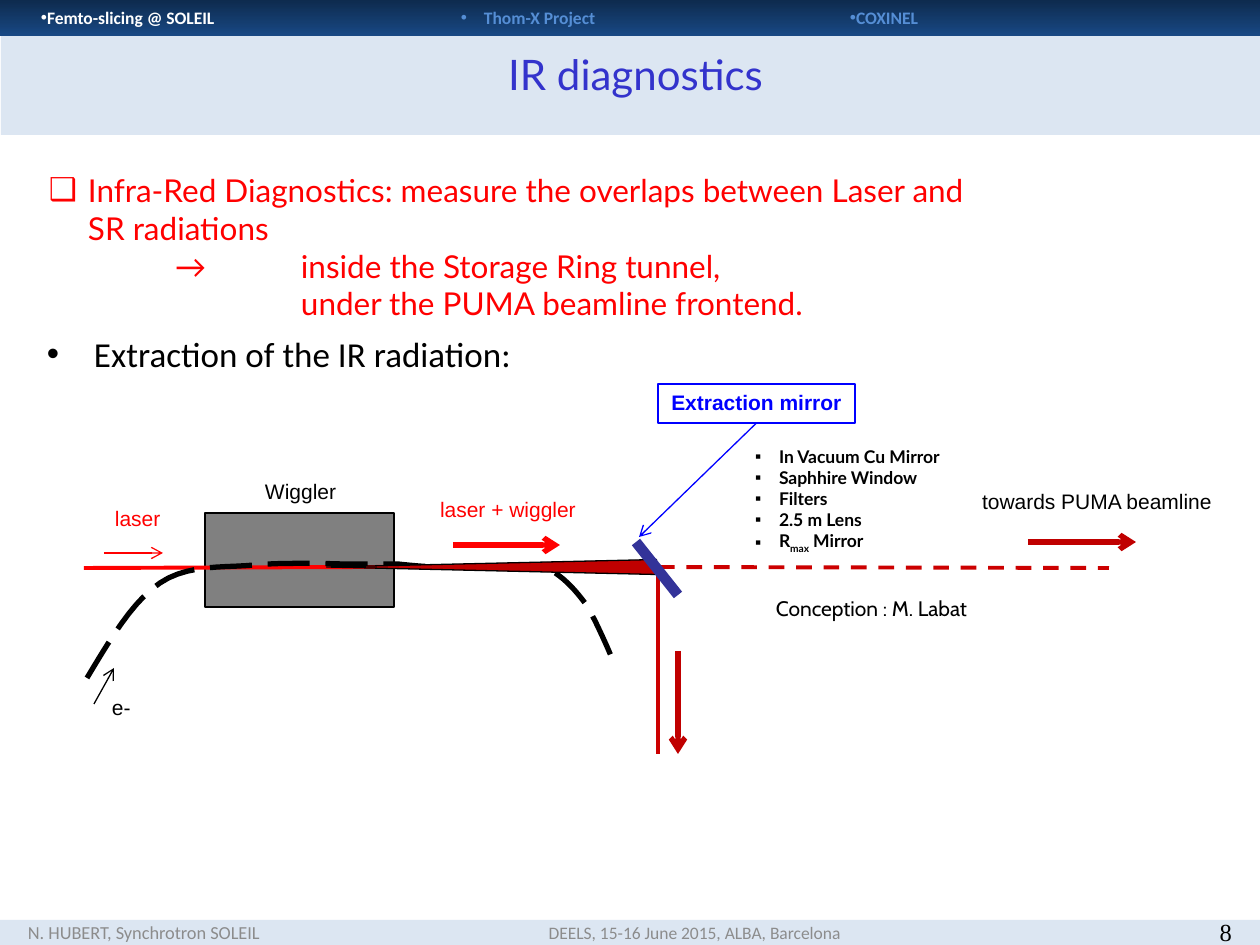
from dataclasses import dataclass

from lxml.etree import SubElement
from pptx import Presentation
from pptx.dml.color import RGBColor
from pptx.enum.dml import MSO_LINE as DASH
from pptx.enum.shapes import MSO_CONNECTOR as CONN, MSO_SHAPE as SHAPE
from pptx.enum.text import MSO_ANCHOR as ANCHOR, PP_ALIGN as ALIGN
from pptx.oxml.ns import qn
from pptx.util import Emu, Pt

PX = 914400 / 126
BLACK, RED, DARK_RED, BLUE = "000000", "FF0000", "C00000", "0000FF"
PALE, SKY, GREY = "DCE6F2", "558ED5", "8C8C8C"
WIDE = (13, 6, 13, 6)
TIGHT = (0, 0, 0, 0)


@dataclass
class Label:
    text: str
    box: tuple
    color: str = BLACK
    size: float = 12
    font: str = "Arial"
    align: ALIGN = ALIGN.LEFT
    anchor: ANCHOR = ANCHOR.TOP
    wrap: bool = False
    bold: bool = False
    bullet: str = ""
    hang: int = 0
    inset: tuple = WIDE


@dataclass
class Line:
    start: tuple
    end: tuple
    color: str
    width: float
    arrow: bool = False
    dash: DASH = None


def px(n: float) -> Emu:
    return Emu(round(n * PX))


def rgb(color: str) -> RGBColor:
    return RGBColor.from_string(color)


def write(tf, text: str, *, size=12, font="Arial", color=BLACK, bold=False,
          align=ALIGN.LEFT, bullet="", hang=0, tabs=()):
    for line in text.split("\n"):
        p = tf.add_paragraph() if tf.paragraphs[0].runs else tf.paragraphs[0]
        p.alignment = align
        pPr = p._p.get_or_add_pPr()
        if bullet:
            pPr.set("marL", str(px(hang)))
            pPr.set("indent", str(-px(hang)))
            SubElement(pPr, qn("a:buFont"), typeface="Arial")
            SubElement(pPr, qn("a:buChar"), char=bullet)
        if tabs:
            stops = SubElement(pPr, qn("a:tabLst"))
            for tab in tabs:
                SubElement(stops, qn("a:tab"), pos=str(px(tab)), algn="l")
        for i, part in enumerate(line.split("|")):
            r = p.add_run()
            r.text = part
            r.font.size, r.font.name, r.font.bold = Pt(size), font, bold
            r.font.color.rgb = rgb(color)
            if i % 2:
                r._r.get_or_add_rPr().set("baseline", "-25000")


def set_frame(tf, inset=WIDE, wrap=False, anchor=ANCHOR.TOP):
    tf.margin_left, tf.margin_top, tf.margin_right, tf.margin_bottom = map(px, inset)
    tf.word_wrap, tf.vertical_anchor = wrap, anchor


def add_label(shapes, label: Label, sp=None):
    sp = sp or shapes.add_textbox(*map(px, label.box))
    set_frame(sp.text_frame, label.inset, label.wrap, label.anchor)
    write(sp.text_frame, label.text, size=label.size, font=label.font,
          color=label.color, bold=label.bold, align=label.align,
          bullet=label.bullet, hang=label.hang)
    return sp


def add_box(shapes, box: tuple, fill="", line="", kind=SHAPE.RECTANGLE):
    sp = shapes.add_shape(kind, *map(px, box))
    sp.shadow.inherit = False
    if fill:
        sp.fill.solid()
        sp.fill.fore_color.rgb = rgb(fill)
    else:
        sp.fill.background()
    if line:
        sp.line.color.rgb, sp.line.width = rgb(line), Pt(0.75)
    else:
        sp.line.fill.background()
    return sp


def add_line(shapes, line: Line):
    c = shapes.add_connector(CONN.STRAIGHT, *map(px, line.start + line.end))
    c.line.color.rgb, c.line.width = rgb(line.color), Pt(line.width)
    if line.dash:
        c.line.dash_style = line.dash
    if line.arrow:
        SubElement(c.line._get_or_add_ln(), qn("a:tailEnd"), type="arrow")
    SubElement(c._element.spPr, qn("a:effectLst"))
    return c


def bezier(a: tuple, b: tuple, c: tuple, d: tuple, steps: int = 10) -> list:
    def at(t):
        weights = ((1 - t) ** 3, 3 * t * (1 - t) ** 2, 3 * t * t * (1 - t), t ** 3)
        return tuple(px(sum(w * q[i] for w, q in zip(weights, (a, b, c, d))))
                     for i in (0, 1))
    return [at(k / steps) for k in range(1, steps + 1)]


def add_electron_path(shapes):
    knots = [(87, 678), (110, 640), (132, 602), (160, 583), (188, 564), (224, 568),
             (255, 565), (285, 562), (341, 564), (341, 564), (360, 564), (379, 564),
             (398, 564), (416, 566), (428, 567), (446, 567), (464, 567), (489, 567),
             (507, 567), (523, 567), (535, 563), (548, 569), (561, 575), (573, 587),
             (585, 603), (596, 619), (614, 663), (614, 663)]
    builder = shapes.build_freeform(*map(px, knots[0]))
    for i in range(0, len(knots) - 1, 3):
        builder.add_line_segments(bezier(*knots[i:i + 4]), close=False)
    sp = builder.convert_to_shape()
    sp.shadow.inherit = False
    sp.fill.background()
    sp.line.color.rgb, sp.line.width = rgb(BLACK), Pt(3)
    sp.line.dash_style = DASH.LONG_DASH


def add_frame(shapes):
    add_box(shapes, (0, 920, 1260, 26), PALE)
    add_box(shapes, (1, 36, 1259, 99), PALE)
    header = add_box(shapes, (0, 0, 1260, 36), PALE)
    header.fill.gradient()
    header.fill.gradient_angle = 270
    for stop, color in zip(header.fill.gradient_stops, ("0E2B4E", "184884")):
        stop.color.rgb = rgb(color)
    for text, x, hang, color in (("Femto-slicing @ SOLEIL", 41, 6, "FFFFFF"),
                                 ("Thom-X Project", 461, 23, SKY),
                                 ("COXINEL", 850, 6, SKY)):
        add_label(shapes, Label(text, (x, 0, 200, 36), color, 10, "Calibri", bold=True,
                                bullet="•", hang=hang, anchor=ANCHOR.MIDDLE, inset=TIGHT))


LABELS = [
    Label("Extraction of the IR radiation:", (34, 327, 1191, 60), size=20,
          font="Calibri", wrap=True, bullet="•", hang=47),
    Label("8", (1186, 919, 59, 26), size=14, font="Times New Roman",
          align=ALIGN.RIGHT, anchor=ANCHOR.MIDDLE, wrap=True),
    Label("IR diagnostics", (40, 43, 1191, 63), "3333CC", 24, "Lato",
          ALIGN.CENTER, wrap=True),
    Label("N. HUBERT, Synchrotron SOLEIL", (15, 920, 348, 25), GREY, 10.5, "Calibri",
          anchor=ANCHOR.MIDDLE, wrap=True),
    Label("DEELS, 15-16 June 2015, ALBA, Barcelona", (322, 920, 745, 25), GREY, 10,
          "Calibri", ALIGN.CENTER, ANCHOR.MIDDLE, wrap=True),
    Label("towards PUMA beamline", (969, 483, 256, 39), align=ALIGN.CENTER),
    Label("Wiggler", (252, 473, 120, 39)),
    Label("e-", (99, 689, 60, 39)),
    Label("laser", (102, 500, 90, 39), RED),
    Label("laser + wiggler", (427, 491, 180, 39), RED),
    Label("Conception : M. Labat", (776, 596, 212, 25), font="Cabin", inset=TIGHT),
]
BEAMS = [
    Line((84, 568), (658, 566), RED, 2.25),
    Line((658, 754), (658, 575), "CC0000", 2.25),
    Line((659, 567), (1109, 568), "CC0000", 2.25, dash=DASH.DASH),
]
MIRROR = Line((678, 595), (636, 542), "333399", 6)
ARROWS = [
    Line((94, 704), (114, 668), BLACK, 0.75, True),
    Line((104, 553), (163, 553), RED, 0.75, True),
    Line((453, 545), (560, 545), RED, 3, True),
    Line((1028, 542), (1136, 542), DARK_RED, 3, True),
    Line((678, 651), (678, 754), DARK_RED, 3, True),
]
MIRROR_PARTS = Label("In Vacuum Cu Mirror\nSaphhire Window\nFilters\n2.5 m Lens\nR|max| Mirror",
                     (755, 446, 193, 106), size=10, font="Lato", bold=True,
                     bullet="▪", hang=24, inset=TIGHT)
MIRROR_NAME = Label("Extraction mirror", (658, 384, 197, 39), BLUE, bold=True,
                    align=ALIGN.CENTER)


def main():
    prs = Presentation()
    prs.slide_width, prs.slide_height = px(1260), px(945)
    shapes = prs.slides.add_slide(prs.slide_layouts[6]).shapes
    add_frame(shapes)

    add_box(shapes, (205, 513, 189, 94), "808080", BLACK)
    for beam in BEAMS:
        add_line(shapes, beam)
    add_electron_path(shapes)
    cone = add_box(shapes, (484, 402, 15, 330), DARK_RED, BLACK, SHAPE.ISOSCELES_TRIANGLE)
    cone.rotation = 270
    for line in [MIRROR] + ARROWS:
        add_line(shapes, line)

    name = add_label(shapes, MIRROR_NAME, add_box(shapes, MIRROR_NAME.box, line=BLUE))
    pointer = add_line(shapes, Line((756, 423), (639, 537), BLUE, 0.75, True))
    pointer.begin_connect(name, 2)
    for label in LABELS:
        add_label(shapes, label)
    add_label(shapes, MIRROR_PARTS, add_box(shapes, MIRROR_PARTS.box, "FFFFFF"))

    intro = add_label(shapes, Label(
        "Infra-Red Diagnostics: measure the overlaps between Laser and SR radiations",
        (36, 165, 946, 165), RED, 18, "Lato", wrap=True, bullet="❑", hang=39))
    write(intro.text_frame,
          "\t→\tinside the Storage Ring tunnel,\n\t\tunder the PUMA beamline frontend.",
          size=18, font="Lato", color=RED, tabs=(126, 252))
    prs.save("out.pptx")


if __name__ == "__main__":
    main()
